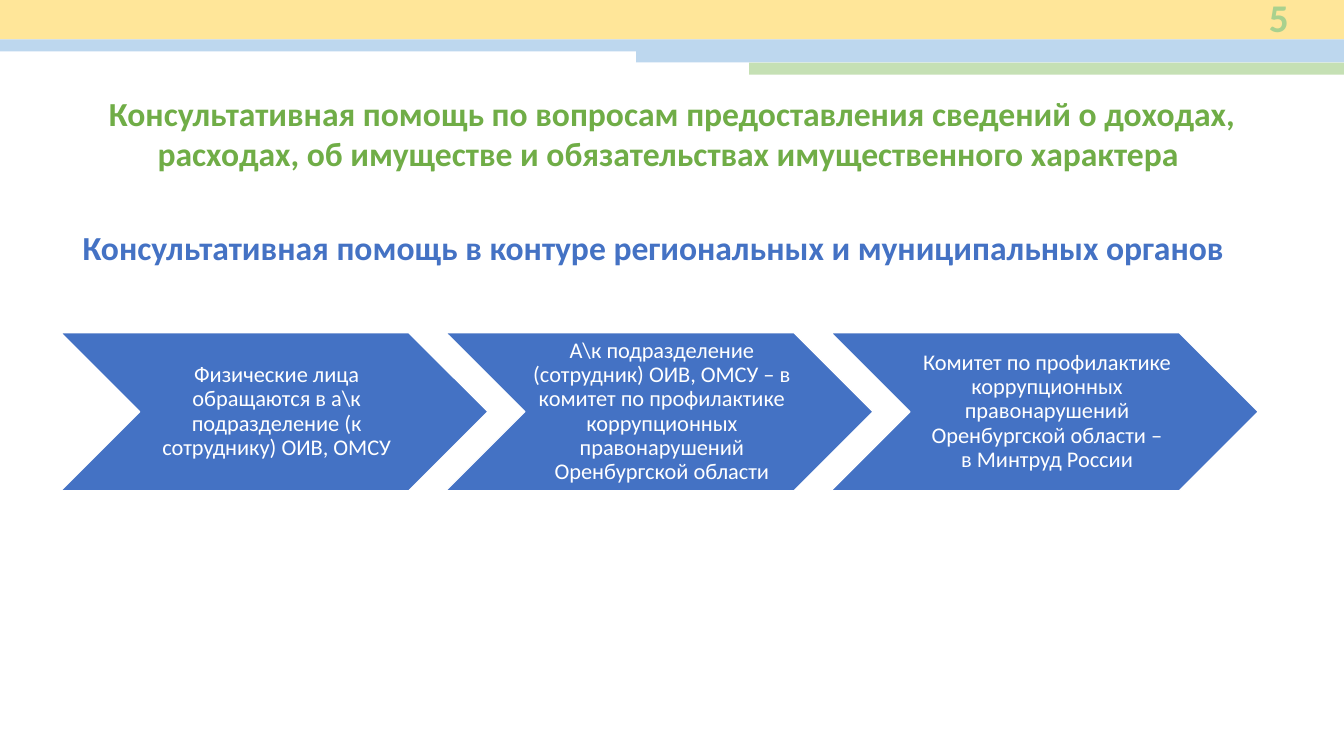
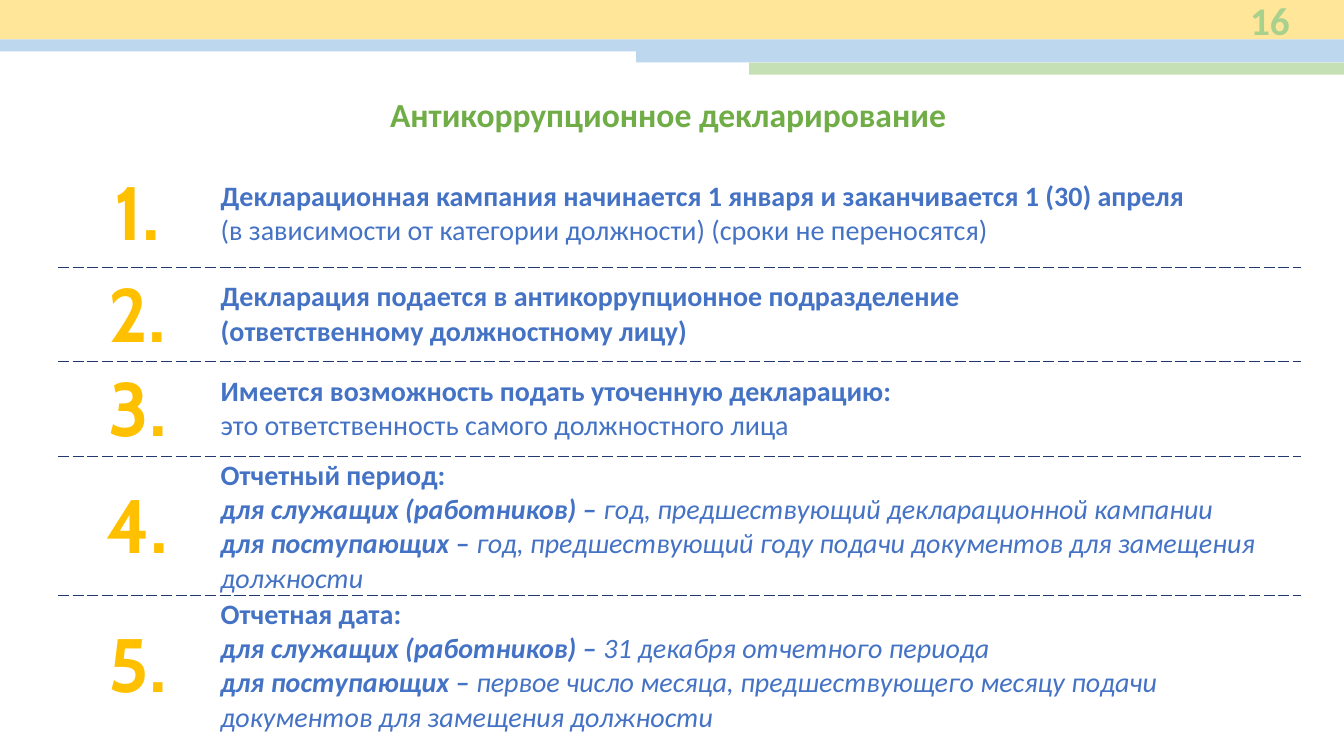
"""Builds two slides on anti-corruption income declarations."""
from lxml import etree
from pptx import Presentation, util as u
from pptx.dml.color import RGBColor
from pptx.enum import shapes, text
from pptx.oxml import ns

PX = 9144
COLORS = {"sand": "FFE699", "sky": "BDD7EE", "mint": "C5E0B4", "page": "A9D18E",
          "green": "70AD47", "blue": "4472C4", "gold": "FFC000", "navy": "21386F",
          "white": "FFFFFF"}
SLIDE_W, SLIDE_H = 1333, 750
BANDS = [(0, 0, 39, "sand"), (0, 39, 12, "sky"), (631, 50, 12, "sky"), (743, 62, 12, "mint")]

HELP_TITLE = ("Консультативная помощь по вопросам предоставления сведений о доходах, "
              "расходах, об имуществе и обязательствах имущественного характера ")
HELP_SUBTITLE = "Консультативная помощь в контуре региональных и муниципальных органов"
STEPS = [
    "Физические лица обращаются в а\\к подразделение (к сотруднику) ОИВ, ОМСУ",
    "А\\к подразделение (сотрудник) ОИВ, ОМСУ – в комитет по профилактике "
    "коррупционных правонарушений Оренбургской области",
    "Комитет по профилактике коррупционных правонарушений Оренбургской области –\n"
    "в Минтруд России",
]
STEP_LEFT, STEP_TOP, STEP_W, STEP_H, STEP_PITCH = 60, 330, 424, 157, 382

RULES_TITLE = "Антикоррупционное декларирование "
RULES = [
    (106, [[("Декларационная кампания начинается 1 января и заканчивается 1 (30) апреля\n", "b"),
            ("(в зависимости от категории должности) (сроки не переносятся)", "")]]),
    (94, [[("Декларация подается в антикоррупционное подразделение\n"
            "(ответственному должностному лицу)", "b")]]),
    (94, [[("Имеется возможность подать уточенную декларацию:\n", "b"),
           ("это ответственность самого должностного лица", "")]]),
    (138, [[("Отчетный период:", "b")],
           [("для служащих (работников) – ", "bi"),
            ("год, предшествующий декларационной кампании", "i")],
           [("для поступающих – ", "bi"),
            ("год, предшествующий году подачи документов для замещения должности", "i")]]),
    (138, [[("Отчетная дата:", "b")],
           [("для служащих (работников) – ", "bi"), ("31 декабря отчетного периода", "i")],
           [("для поступающих – ", "bi"),
            ("первое число месяца, предшествующего месяцу подачи документов "
             "для замещения должности", "i")]]),
]
RULE_COLUMNS = [157, 1075]


def px(*lengths):
    return [u.Emu(length * PX) for length in lengths]


def rgb(name):
    return RGBColor.from_string(COLORS[name])


def write(frame, content, size, color, style="", font="Calibri", align="CENTER",
          anchor="MIDDLE", insets=(10, 5, 10, 5), spacing=None):
    """Fill a text frame with a string or a list of paragraphs of (text, style) runs."""
    frame.word_wrap = True
    frame.vertical_anchor = text.MSO_ANCHOR[anchor]
    frame.margin_left, frame.margin_top, frame.margin_right, frame.margin_bottom = px(*insets)
    paragraphs = [[(content, style)]] if isinstance(content, str) else content
    for index, runs in enumerate(paragraphs):
        paragraph = frame.add_paragraph() if index else frame.paragraphs[0]
        paragraph.alignment = text.PP_ALIGN[align]
        if spacing:
            paragraph.line_spacing = spacing
        for words, run_style in runs:
            for number, line in enumerate(words.split("\n")):
                if number:
                    paragraph.add_line_break()
                if not line:
                    continue
                run = paragraph.add_run()
                run.text = line
                run.font.name, run.font.size = font, u.Pt(size)
                run.font.bold, run.font.italic = "b" in run_style, "i" in run_style
                run.font.color.rgb = rgb(color)


def add_block(slide, preset, box, fill, line=None):
    block = slide.shapes.add_shape(preset, *px(*box))
    block.shadow.inherit = False
    block.fill.solid()
    block.fill.fore_color.rgb = rgb(fill)
    if line:
        block.line.color.rgb = rgb(line)
        block.line.width = u.Pt(1)
    else:
        block.line.fill.background()
    return block


def start_slide(deck, title, title_box, page, page_box):
    slide = deck.slides.add_slide(deck.slide_layouts[5])
    for left, top, height, fill in BANDS:
        add_block(slide, shapes.MSO_SHAPE.RECTANGLE, (left, top, SLIDE_W - left, height), fill)
    heading = slide.shapes.title
    heading.left, heading.top, heading.width, heading.height = px(*title_box)
    heading.text_frame.auto_size = text.MSO_AUTO_SIZE.NONE
    write(heading.text_frame, title, 24, "green", "b", anchor="TOP")
    number = slide.shapes.add_textbox(*px(*page_box))
    write(number.text_frame, page, 28, "page", "b", align="RIGHT")
    return slide


def dash_edges(cell, edges):
    properties = cell._tc.get_or_add_tcPr()
    for position, edge in enumerate(edges):
        border = etree.Element(ns.qn(f"a:{edge}"), w=str(u.Pt(1)))
        fill = etree.SubElement(border, ns.qn("a:solidFill"))
        etree.SubElement(fill, ns.qn("a:srgbClr"), val=COLORS["navy"])
        etree.SubElement(border, ns.qn("a:prstDash"), val="dash")
        properties.insert(position, border)


def build_help(deck):
    slide = start_slide(deck, HELP_TITLE, (60, 87, 1213, 91), "5", (1163, -5, 125, 44))
    for index, step in enumerate(STEPS):
        box = (STEP_LEFT + index * STEP_PITCH, STEP_TOP, STEP_W, STEP_H)
        chevron = add_block(slide, shapes.MSO_SHAPE.CHEVRON, box, "blue", "white")
        write(chevron.text_frame, step, 16, "white", insets=(7, 2, 2, 2), spacing=0.9)
    subtitle = slide.shapes.add_textbox(*px(60, 198, 1176, 94))
    write(subtitle.text_frame, HELP_SUBTITLE, 24, "blue", "b")


def build_rules(deck):
    slide = start_slide(deck, RULES_TITLE, (60, 88, 1213, 50), "16", (1193, 0, 96, 39))
    heights = [height for height, _ in RULES]
    box = (58, 159, sum(RULE_COLUMNS), sum(heights))
    table = slide.shapes.add_table(len(RULES), len(RULE_COLUMNS), *px(*box)).table
    table.first_row = table.horz_banding = False
    for column, width in zip(table.columns, px(*RULE_COLUMNS)):
        column.width = width
    last = len(RULES) - 1
    for index, (height, rule) in enumerate(RULES):
        table.rows[index].height = px(height)[0]
        ordinal, wording = table.rows[index].cells
        edges = ["lnT"] * (index > 0) + ["lnB"] * (index < last)
        for cell in (ordinal, wording):
            cell.fill.background()
            dash_edges(cell, edges)
            cell.vertical_anchor = text.MSO_ANCHOR.MIDDLE
            cell.margin_left, cell.margin_top, cell.margin_right, cell.margin_bottom = px(4, 2, 4, 2)
        write_cell(ordinal, f"{index + 1}.", 54, "gold", style="b", font="Cabin")
        write_cell(wording, rule, 20, "blue", align="LEFT")


def write_cell(cell, content, size, color, **formats):
    write(cell.text_frame, content, size, color, insets=(4, 2, 4, 2), **formats)
    body = cell.text_frame._txBody.find(ns.qn("a:bodyPr"))
    body.attrib.clear()


def main():
    deck = Presentation()
    deck.slide_width, deck.slide_height = px(SLIDE_W, SLIDE_H)
    build_help(deck)
    build_rules(deck)
    deck.save("out.pptx")


if __name__ == "__main__":
    main()
